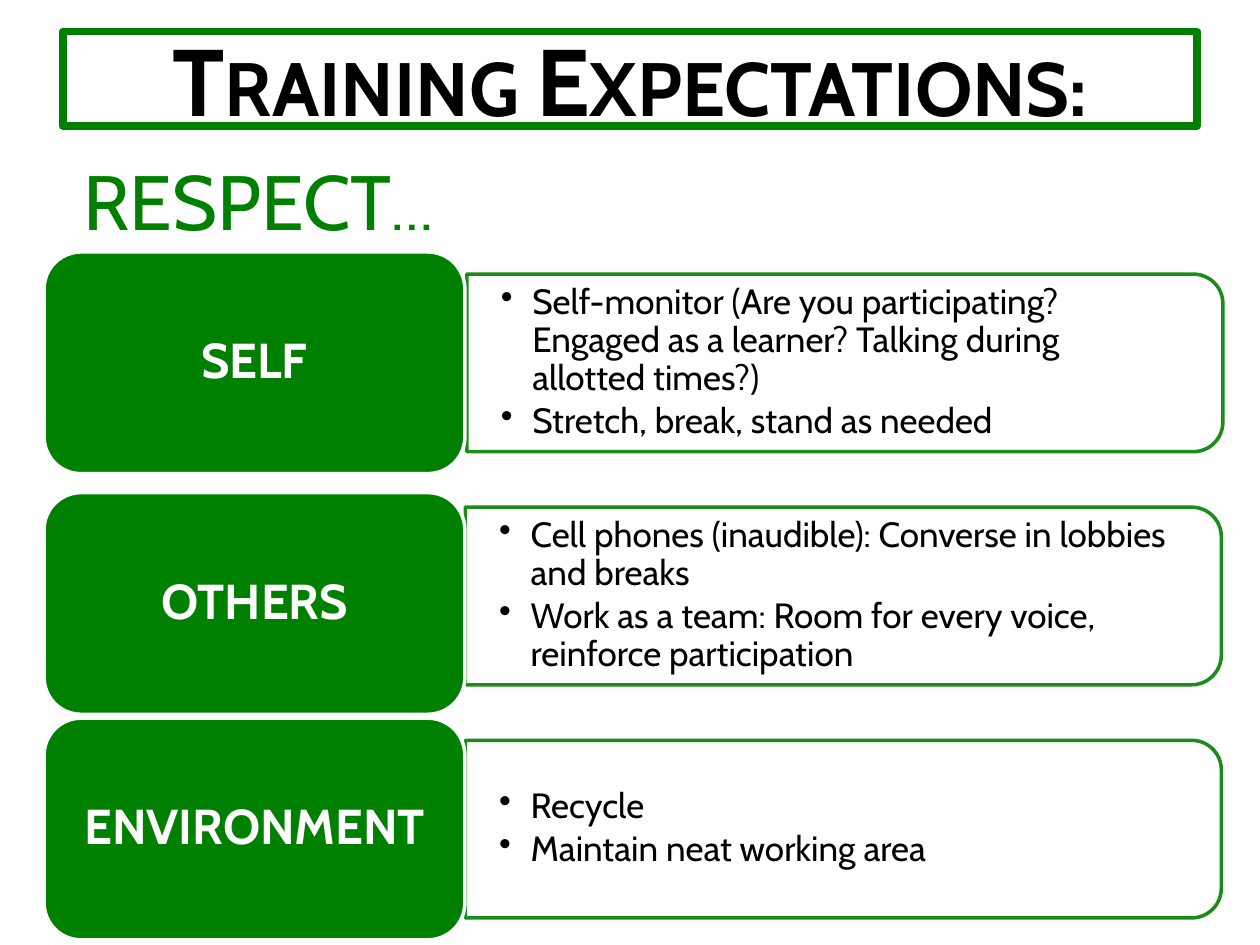
from dataclasses import dataclass

from lxml.etree import SubElement
from pptx import Presentation
from pptx.dml.color import RGBColor
from pptx.enum.shapes import MSO_SHAPE
from pptx.enum.text import MSO_ANCHOR, MSO_AUTO_SIZE, PP_ALIGN
from pptx.oxml.ns import qn
from pptx.util import Pt


@dataclass(frozen=True)
class Theme:
    font: str = "Cabin"
    green: RGBColor = RGBColor(0x00, 0x80, 0x00)
    white: RGBColor = RGBColor(0xFF, 0xFF, 0xFF)
    black: RGBColor = RGBColor(0x00, 0x00, 0x00)
    title_size: int = 54
    heading_size: int = 44
    label_size: int = 28
    bullet_size: int = 20


@dataclass(frozen=True)
class Expectation:
    label: str
    label_top: float
    card_left: float
    bullets: tuple[str, ...]


THEME = Theme()
LABEL_LEFT, LABEL_WIDTH, LABEL_HEIGHT = 25.2, 240.5, 126.7
CARD_TOP, CARD_STEP, CARD_WIDTH, CARD_HEIGHT = 156.6, 133.2, 432, 101.5
BULLETS_WIDTH, BULLETS_HEIGHT = 427, 91.4

EXPECTATIONS = (
    Expectation("SELF", 144, 266.8, (
        "Self-monitor (Are you participating? Engaged as a learner? "
        "Talking during allotted times?)",
        "Stretch, break, stand as needed")),
    Expectation("OTHERS", 281.5, 265.9, (
        "Cell phones (inaudible): Converse in lobbies and breaks",
        "Work as a team: Room for every voice, reinforce participation")),
    Expectation("ENVIRONMENT", 410.4, 265.9, (
        "Recycle",
        "Maintain neat working area")),
)


def add_run(paragraph, text: str, size: int, color: RGBColor,
            bold: bool = False, small_caps: bool = False) -> None:
    run = paragraph.add_run()
    run.text = text
    run.font.name = THEME.font
    run.font.size = Pt(size)
    run.font.bold = bold
    run.font.color.rgb = color
    if small_caps:
        run.font._element.set("cap", "small")


def set_frame(frame, side: float, edge: float) -> None:
    frame.word_wrap = True
    frame.auto_size = MSO_AUTO_SIZE.NONE
    frame.vertical_anchor = MSO_ANCHOR.MIDDLE
    frame.margin_left = frame.margin_right = Pt(side)
    frame.margin_top = frame.margin_bottom = Pt(edge)


def add_card(slide, left: float, top: float) -> None:
    """Outline rounded on its right side: a turned top-rounded rectangle."""
    shift = (CARD_WIDTH - CARD_HEIGHT) / 2
    card = slide.shapes.add_shape(
        MSO_SHAPE.ROUND_2_SAME_RECTANGLE, Pt(left + shift), Pt(top - shift),
        Pt(CARD_HEIGHT), Pt(CARD_WIDTH))
    card.rotation = 90
    card.shadow.inherit = False
    card.fill.background()
    card.line.width = Pt(2)
    card.line.color.rgb = THEME.green
    line_color = card.line._ln.find(".//" + qn("a:srgbClr"))
    SubElement(line_color, qn("a:alpha"), val="90000")


def add_bullets(slide, left: float, top: float, bullets: tuple[str, ...]) -> None:
    box = slide.shapes.add_textbox(
        Pt(left), Pt(top), Pt(BULLETS_WIDTH), Pt(BULLETS_HEIGHT))
    frame = box.text_frame
    set_frame(frame, side=19.4, edge=10)
    for index, bullet in enumerate(bullets):
        paragraph = frame.paragraphs[0] if index == 0 else frame.add_paragraph()
        paragraph.level = 1
        paragraph.line_spacing = 0.9
        paragraph.space_after = Pt(3)
        properties = paragraph._p.get_or_add_pPr()
        properties.set("marL", str(Pt(18)))
        properties.set("indent", str(-Pt(18)))
        SubElement(properties, qn("a:buChar"), char="•")
        add_run(paragraph, bullet, THEME.bullet_size, THEME.black)


def add_label(slide, text: str, top: float) -> None:
    label = slide.shapes.add_shape(
        MSO_SHAPE.ROUNDED_RECTANGLE, Pt(LABEL_LEFT), Pt(top),
        Pt(LABEL_WIDTH), Pt(LABEL_HEIGHT))
    label.shadow.inherit = False
    label.fill.solid()
    label.fill.fore_color.rgb = THEME.green
    label.line.width = Pt(2)
    label.line.color.rgb = THEME.white
    set_frame(label.text_frame, side=8.4, edge=4.2)
    paragraph = label.text_frame.paragraphs[0]
    paragraph.alignment = PP_ALIGN.CENTER
    paragraph.line_spacing = 0.9
    paragraph.space_after = Pt(10)
    add_run(paragraph, text, THEME.label_size, THEME.white, bold=True)


def add_title(slide, text: str) -> None:
    title = slide.shapes.title
    title.left, title.top, title.width, title.height = Pt(36), Pt(18), Pt(648), Pt(54)
    title.line.width = Pt(4.5)
    title.line.color.rgb = THEME.green
    set_frame(title.text_frame, side=7.2, edge=3.6)
    paragraph = title.text_frame.paragraphs[0]
    paragraph.alignment = PP_ALIGN.CENTER
    add_run(paragraph, text, THEME.title_size, THEME.black, bold=True, small_caps=True)


def add_heading(slide, text: str) -> None:
    heading = slide.shapes.add_textbox(Pt(36), Pt(84.2), Pt(223.2), Pt(60.5))
    heading.text_frame.word_wrap = False
    heading.text_frame.auto_size = MSO_AUTO_SIZE.SHAPE_TO_FIT_TEXT
    paragraph = heading.text_frame.paragraphs[0]
    paragraph.alignment = PP_ALIGN.CENTER
    add_run(paragraph, text, THEME.heading_size, THEME.green, small_caps=True)


def main() -> None:
    deck = Presentation()
    deck.slide_width, deck.slide_height = Pt(720), Pt(540)
    slide = deck.slides.add_slide(deck.slide_layouts[5])

    # Title and heading
    add_title(slide, "Training Expectations:")
    add_heading(slide, "RESPECT…")

    # One row per expectation: card, bullets, label
    for row, item in enumerate(EXPECTATIONS):
        card_top = CARD_TOP + row * CARD_STEP
        add_card(slide, item.card_left, card_top)
        add_bullets(slide, item.card_left, card_top + 5, item.bullets)
        add_label(slide, item.label, item.label_top)

    deck.save("out.pptx")


if __name__ == "__main__":
    main()
